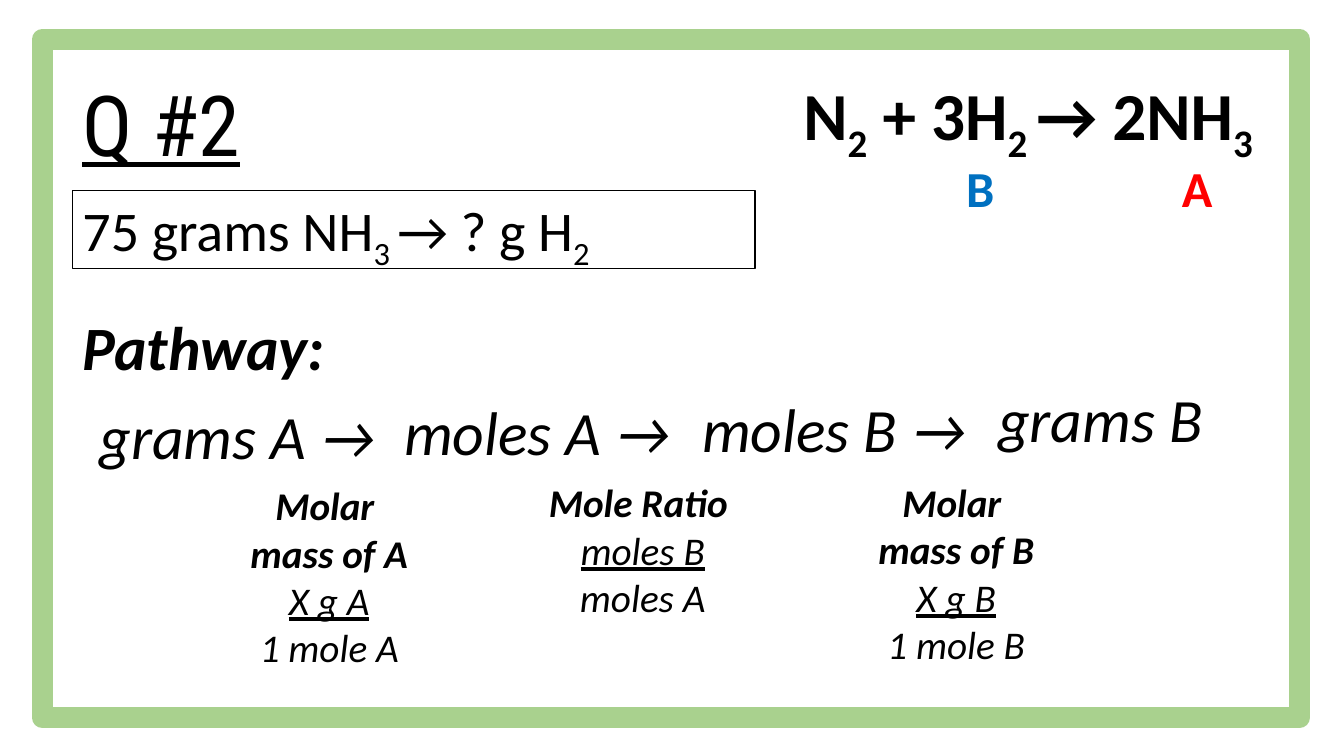
from dataclasses import dataclass
from pptx import Presentation
from pptx import util as u
from pptx.dml.color import RGBColor
from pptx.enum import shapes, text


@dataclass(frozen=True)
class Theme:
    font: str = "Calibri"
    head: str = "Roboto Condensed"
    ink: str = "000000"
    paper: str = "FFFFFF"
    green: str = "A9D18E"
    red: str = "FF0000"
    blue: str = "0070C0"
    title: int = 60
    sum: int = 48
    step: int = 44
    ask: int = 40
    tag: int = 36
    note: int = 28


T = Theme()
MID, LEFT = text.PP_ALIGN.CENTER, text.PP_ALIGN.LEFT
deck = Presentation()
deck.slide_width, deck.slide_height = u.Inches(13.33), u.Inches(7.5)
slide = deck.slides.add_slide(deck.slide_layouts[6])


def place(box):
    """Turn percentages of the slide into lengths."""
    sides = (deck.slide_width, deck.slide_height) * 2
    return [u.Emu(int(side * part / 100)) for side, part in zip(sides, box)]


def panel(box, fill=None, line=None, width=0.75):
    rect = slide.shapes.add_shape(shapes.MSO_SHAPE.RECTANGLE, *place(box))
    rect.shadow.inherit = False
    if fill:
        rect.fill.solid()
        rect.fill.fore_color.rgb = RGBColor.from_string(fill)
    else:
        rect.fill.background()
    if line:
        rect.line.color.rgb = RGBColor.from_string(line)
        rect.line.width = u.Pt(width)
    else:
        rect.line.fill.background()
    return rect


def label(box, wrap=True):
    area = slide.shapes.add_textbox(*place(box))
    area.text_frame.word_wrap = wrap
    return area


def write(shape, lines, size, align=LEFT, color=T.ink, font=T.font):
    """Fill a shape with (words, style) lines; _ opens and closes a subscript."""
    frame = shape.text_frame
    for row, (words, style) in enumerate(lines):
        para = frame.add_paragraph() if row else frame.paragraphs[0]
        para.alignment = align
        face = para.font
        face.name, face.size = font, u.Pt(size)
        face.color.rgb = RGBColor.from_string(color)
        face.bold, face.italic, face.underline = (k in style for k in "biu")
        for turn, part in enumerate(words.split("_")):
            if part:
                run = para.add_run()
                run.text = part
                if turn % 2:
                    run._r.get_or_add_rPr().set("baseline", "-25000")
    return frame


def heading(box):
    frame = write(label(box), [("Q #2", "u")], T.title, font=T.head)
    frame.margin_top = u.Inches(0.15)
    frame.paragraphs[0].line_spacing = 0.9


def equation(box):
    x, y, w, h = box
    write(label(box), [("N_2_ + 3H_2 _→ 2NH_3", "b")], T.sum, MID)
    # Letters under the given and the wanted substance
    for name, share, color in (("A", 0.73, T.red), ("B", 0.385, T.blue)):
        spot = x + w * share, y + 11.06, 7.35, 9.47
        write(label(spot), [(name, "b")], T.tag, color=color)


def question(box):
    frame = write(panel(box, line=T.ink), [("75 grams NH_3 _→ ? g H_2", "")], T.ask)
    frame.vertical_anchor = text.MSO_ANCHOR.TOP


def pathway(box):
    x, y, w, h = box
    write(panel((x, y, w, 18.13), T.paper), [("Pathway:", "bi")], T.step)
    # Chain of units: words, left, top, width
    for words, left, top, wide in (("grams A →", 0.98, 15.33, 22.65),
                                   ("moles A →", 23.63, 14.8, 21.98),
                                   ("moles B →", 45.53, 14.4, 22.35),
                                   ("grams B ", 68.03, 13.06, 17.93)):
        step = label((x + left, y + top, wide, 11.2), False)
        write(step, [(words, "i")], T.step, MID)
    # Conversion factor under each arrow
    for name, left, top in (("A", 9.53, 26.4), ("B", 56.18, 26)):
        molar = [("Molar ", "bi"), (f"mass of {name}", "bi"),
                 (f"X g {name}", "iu"), (f"1 mole {name}", "i")]
        write(label((x + left, y + top, 19.13, 26.53)), molar, T.note, MID)
    ratio = [("Mole Ratio ", "bi"), ("moles B", "iu"), ("moles A", "i")]
    write(label((x + 34.58, y + 26, 15.68, 20.13), False), ratio, T.note, MID)


# Green frame, then the regions from top to bottom
panel((3.15, 5.2, 93.53, 89.73), T.paper, T.green, 15)
heading((5.4, 9.07, 88.95, 26.13))
equation((53.25, 9.07, 46.5, 12.13))
question((5.4, 25.2, 50.78, 10.27))
pathway((5.4, 36.67, 83.48, 52.93))
deck.save("out.pptx")
